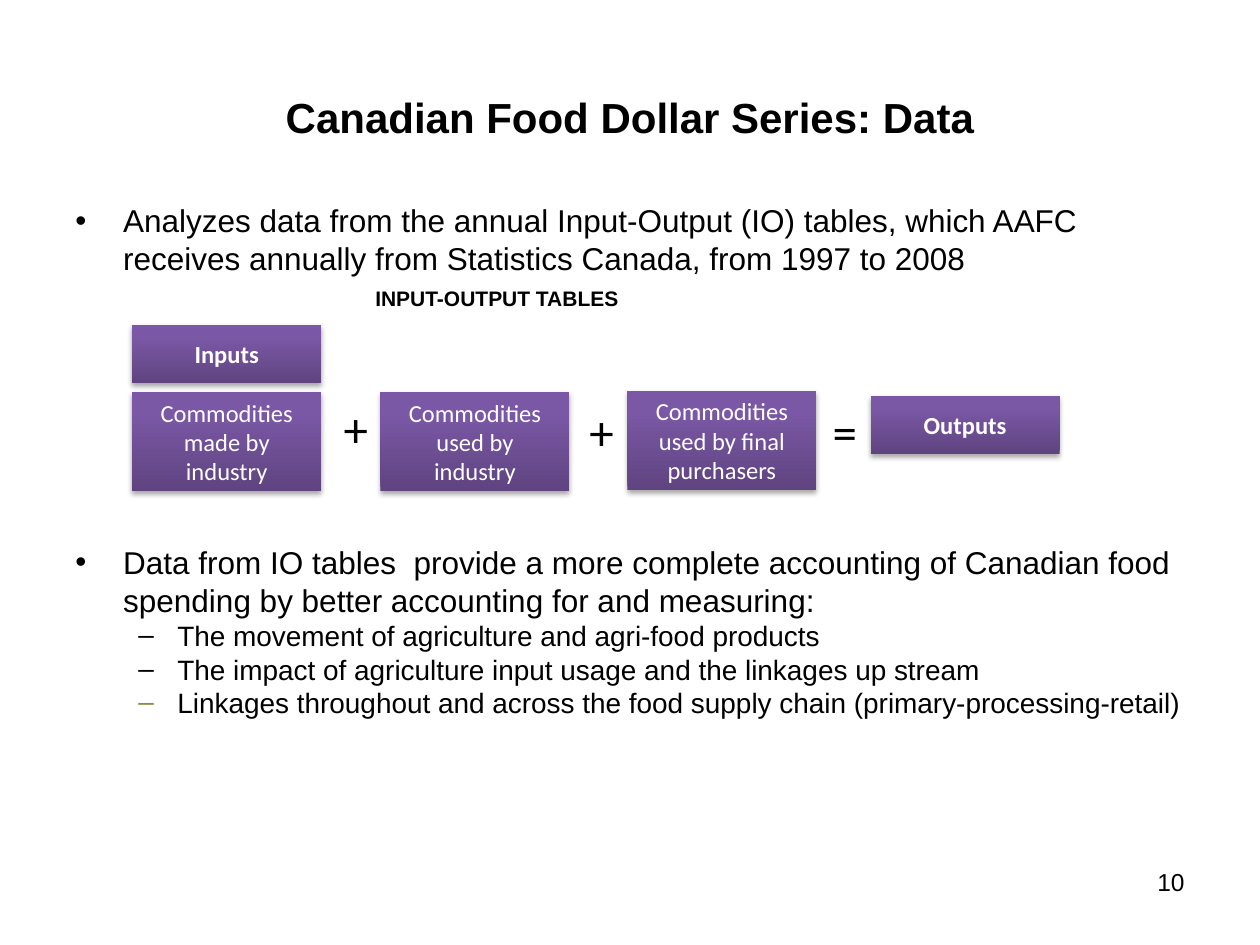
from lxml import etree
from pptx import Presentation
from pptx.dml.color import RGBColor
from pptx.enum.shapes import MSO_SHAPE
from pptx.enum.text import MSO_ANCHOR, PP_ALIGN
from pptx.oxml import parse_xml
from pptx.oxml.ns import nsdecls, qn
from pptx.util import Inches, Pt

RECTANGLE = MSO_SHAPE.RECTANGLE
TOP, MIDDLE = MSO_ANCHOR.TOP, MSO_ANCHOR.MIDDLE
LEFT, CENTER, RIGHT = PP_ALIGN.LEFT, PP_ALIGN.CENTER, PP_ALIGN.RIGHT

BLACK = RGBColor(0x00, 0x00, 0x00)
WHITE = RGBColor(0xFF, 0xFF, 0xFF)
OLIVE = RGBColor(0x8D, 0x8B, 0x45)
PURPLE_STOPS = [
    (0, RGBColor(0x5F, 0x44, 0x80)),
    (80, RGBColor(0x7B, 0x58, 0xA6)),
    (100, RGBColor(0x7C, 0x57, 0xA8)),
]

# text, left, top, width, height, size, bold, alignment, anchor, wrap, font
LABELS = [
    ("Canadian Food Dollar Series: Data", 0.5, 0.3, 9, 1.25, 24, True, CENTER, MIDDLE, True, "Arial"),
    ("INPUT-OUTPUT TABLES", 2.88, 2.22, 2.15, 0.3, 12, True, LEFT, TOP, False, "Arial"),
    ("10", 7.17, 6.83, 2.33, 0.52, 14, False, RIGHT, TOP, True, "Arial"),
]
LABELS += [
    (sign, left, top, 0.4, 0.57, 28, False, LEFT, TOP, False, "Calibri")
    for sign, left, top in [("+", 2.63, 3.11), ("+", 4.58, 3.14), ("=", 6.51, 3.14)]
]

# top, height, paragraphs as (level, text, bullet colour)
BULLET_BLOCKS = [
    (1.55, 0.7, [
        (0, "Analyzes data from the annual Input-Output (IO) tables, which AAFC "
            "receives annually from Statistics Canada, from 1997 to 2008", BLACK),
    ]),
    (4.26, 1.6, [
        (0, "Data from IO tables  provide a more complete accounting of Canadian food "
            "spending by better accounting for and measuring:", BLACK),
        (1, "The movement of agriculture and agri-food products", BLACK),
        (1, "The impact of agriculture input usage and the linkages up stream", BLACK),
        (1, "Linkages throughout and across the food supply chain "
            "(primary-processing-retail)", OLIVE),
    ]),
]
# per level: bullet, size, left margin, hanging indent, line spacing
LEVELS = [("•", 18, 0.38, 0.38, 1.0), ("–", 16, 0.81, 0.31, 0.8)]

# text, left, top, is heading
BOXES = [
    ("Inputs", 1.05, 2.58, True),
    ("Commodities made by industry", 1.05, 3.11, False),
    ("Commodities used by industry", 3.02, 3.11, False),
    ("Commodities used by final purchasers", 4.98, 3.1, False),
    ("Outputs", 6.91, 3.14, True),
]
BOX_WIDTH, HEADING_HEIGHT, BOX_HEIGHT = 1.5, 0.46, 0.79


def style_font(font, name, size, color, bold=False):
    font.name, font.size, font.bold = name, Pt(size), bold
    font.color.rgb = color


def add_label(slide, text, left, top, width, height, size, bold, alignment, anchor, wrap, font_name):
    shape = slide.shapes.add_textbox(Inches(left), Inches(top), Inches(width), Inches(height))
    frame = shape.text_frame
    frame.text = text
    frame.word_wrap = wrap
    frame.vertical_anchor = anchor
    paragraph = frame.paragraphs[0]
    paragraph.alignment = alignment
    style_font(paragraph.runs[0].font, font_name, size, BLACK, bold)


def set_bullet(paragraph, character, color, margin, hanging):
    properties = paragraph._p.get_or_add_pPr()
    properties.set("marL", str(Inches(margin)))
    properties.set("indent", str(-Inches(hanging)))
    bullet_color = etree.SubElement(properties, qn("a:buClr"))
    etree.SubElement(bullet_color, qn("a:srgbClr"), val=str(color))
    etree.SubElement(properties, qn("a:buFont"), typeface="Arial")
    etree.SubElement(properties, qn("a:buChar"), char=character)


def add_bullets(slide, top, height, items):
    shape = slide.shapes.add_textbox(Inches(0.5), Inches(top), Inches(9), Inches(height))
    frame = shape.text_frame
    frame.word_wrap = True
    for index, (level, text, bullet_color) in enumerate(items):
        character, size, margin, hanging, spacing = LEVELS[level]
        paragraph = frame.add_paragraph() if index else frame.paragraphs[0]
        paragraph.text = text
        paragraph.level = level
        set_bullet(paragraph, character, bullet_color, margin, hanging)
        paragraph.line_spacing = spacing
        paragraph.space_before = Pt(3.8 if index else 0)
        style_font(paragraph.runs[0].font, "Arial", size, BLACK)


def add_gradient_and_shadow(shape):
    stops = "".join(
        f'<a:gs pos="{position * 1000}"><a:srgbClr val="{color}"/></a:gs>'
        for position, color in PURPLE_STOPS
    )
    shape.line.fill.background()
    shape.shadow.inherit = False
    properties = shape._element.spPr
    properties.find(qn("a:prstGeom")).addnext(parse_xml(
        f'<a:gradFill {nsdecls("a")} rotWithShape="1"><a:gsLst>{stops}</a:gsLst>'
        '<a:lin ang="16200000" scaled="0"/></a:gradFill>'
    ))
    properties.find(qn("a:effectLst")).append(parse_xml(
        f'<a:outerShdw {nsdecls("a")} blurRad="{Pt(3.1)}" dist="{Pt(1.8)}" dir="5400000" '
        'rotWithShape="0"><a:srgbClr val="000000"><a:alpha val="35000"/></a:srgbClr></a:outerShdw>'
    ))


def add_box(slide, text, left, top, heading):
    height = HEADING_HEIGHT if heading else BOX_HEIGHT
    shape = slide.shapes.add_shape(
        RECTANGLE, Inches(left), Inches(top), Inches(BOX_WIDTH), Inches(height))
    add_gradient_and_shadow(shape)
    frame = shape.text_frame
    frame.text = text
    frame.word_wrap = True
    frame.vertical_anchor = MIDDLE
    paragraph = frame.paragraphs[0]
    paragraph.alignment = CENTER
    style_font(paragraph.runs[0].font, "Calibri", 14, WHITE, heading)


def main():
    presentation = Presentation()
    presentation.slide_width, presentation.slide_height = Inches(10), Inches(7.5)
    slide = presentation.slides.add_slide(presentation.slide_layouts[6])
    for block in BULLET_BLOCKS:
        add_bullets(slide, *block)
    for box in BOXES:
        add_box(slide, *box)
    for label in LABELS:
        add_label(slide, *label)
    presentation.save("out.pptx")


if __name__ == "__main__":
    main()
